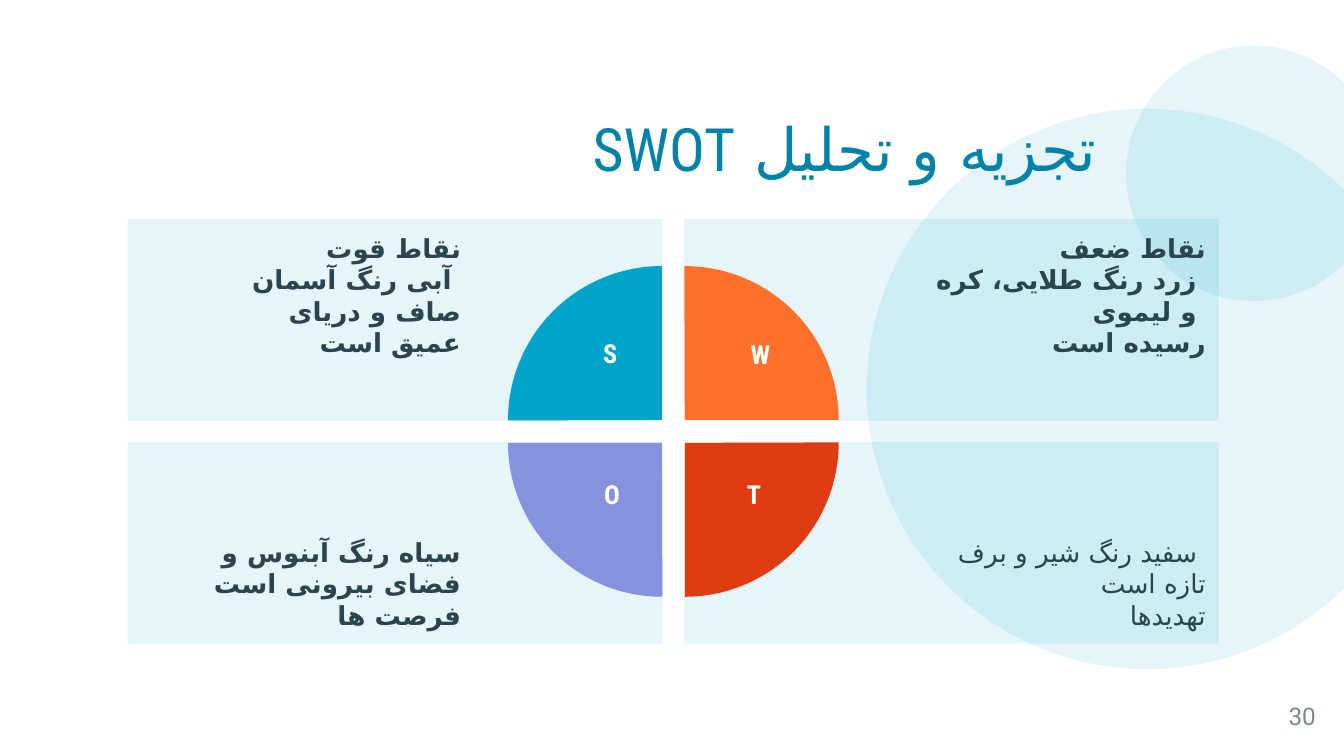
import lxml.etree
import pptx
import pptx.dml.color
import pptx.enum.shapes
import pptx.enum.text
import pptx.oxml.ns
import pptx.util

RGB = pptx.dml.color.RGBColor
SHAPE = pptx.enum.shapes.MSO_SHAPE
ANCHOR = pptx.enum.text.MSO_ANCHOR
qn = pptx.oxml.ns.qn

SKY = RGB(0x00, 0xA4, 0xCA)
ORANGE = RGB(0xFF, 0x71, 0x2A)
RED = RGB(0xDF, 0x3D, 0x11)
VIOLET = RGB(0x87, 0x92, 0xDF)
BLUE = RGB(0x00, 0x82, 0xA9)
SLATE = RGB(0x2C, 0x44, 0x4E)
GREY = RGB(0x7D, 0x8A, 0x8D)
WHITE = RGB(0xFF, 0xFF, 0xFF)
PERSIAN_FONT = "DejaVu Sans"  # Roboto has no Persian letters

TITLE = "تجزیه و تحلیل SWOT"
PAGE_NUMBER = "30"
CIRCLES = [(6.45, 0.81, 4.17), (8.38, 0.34, 1.9)]  # left, top, diameter

# Clockwise from top left: column, row, colour, bold, lines, letter, letter box
QUADRANTS = [
    (0, 0, SKY, True, ["نقاط قوت", "آبی رنگ آسمان ", "صاف و دریای", " عمیق است"],
     "S", (4.39, 2.46, 0.26, 0.43)),
    (1, 0, ORANGE, True, ["نقاط ضعف", "زرد رنگ طلایی، کره ", "و لیموی ", "رسیده است"],
     "W", (5.35, 2.47, 0.48, 0.41)),
    (1, 1, RED, False, ["سفید رنگ شیر و برف ", "تازه است", "تهدیدها"],
     "T", (5.46, 3.51, 0.27, 0.41)),
    (0, 1, VIOLET, True, ["سیاه رنگ آبنوس و", " فضای بیرونی است", "فرصت ها"],
     "O", (4.36, 3.51, 0.35, 0.43)),
]

GRID_LEFT, GRID_TOP = 0.95, 1.63
PANEL_W, PANEL_H, GAP = 3.98, 1.5, 0.16
PIE_LEFT, PIE_TOP, PIE_SIZE, PIE_GAP = 3.78, 1.98, 2.29, 0.17
MARGIN, PIE_MARGIN = 0.1, 1.5

prs = pptx.Presentation()
prs.slide_width = pptx.util.Inches(10)
prs.slide_height = prs.slide_width * 9 // 16
s = prs.slides.add_slide(prs.slide_layouts[6])


def inches(box):
    return [pptx.util.Inches(v) for v in box]


def add_shape(kind, box, color, alpha=None, adjustments=(), rotation=0):
    """Add a borderless preset shape; alpha is its opacity in percent."""
    sp = s.shapes.add_shape(kind, *inches(box))
    sp.shadow.inherit = False
    sp.line.fill.background()
    sp.fill.solid()
    sp.fill.fore_color.rgb = color
    if alpha is not None:
        clr = sp.fill._xPr.find(".//" + qn("a:srgbClr"))
        lxml.etree.SubElement(clr, qn("a:alpha"), val=str(alpha * 1000))
    for i, value in enumerate(adjustments):
        sp.adjustments[i] = value
    sp.rotation = rotation
    return sp


def write(sp, lines, margins, anchor, name, size, color, bold=False):
    """Fill a shape with right-aligned lines; margins are left, top, right, bottom."""
    tf = sp.text_frame
    tf.word_wrap = True
    tf.vertical_anchor = anchor
    for side, value in zip(("left", "top", "right", "bottom"), inches(margins)):
        setattr(tf, "margin_" + side, value)
    font = {"name": name, "size": pptx.util.Pt(size), "bold": bold}
    for i, line in enumerate(lines):
        p = tf.add_paragraph() if i else tf.paragraphs[0]
        p.alignment = pptx.enum.text.PP_ALIGN.RIGHT
        r = p.add_run()
        r.text = line
        for key, value in font.items():
            setattr(r.font, key, value)
        r.font.color.rgb = color
        lxml.etree.SubElement(r._r.get_or_add_rPr(), qn("a:cs"), typeface=PERSIAN_FONT)
    return tf


for left, top, size in CIRCLES:
    add_shape(SHAPE.CHORD, (left, top, size, size), SKY, 10, (27, 189))

title = s.shapes.add_textbox(*inches((0.94, 0.72, 7.22, 0.82)))
tf = write(title, [TITLE], [0] * 4, ANCHOR.MIDDLE, "Roboto Condensed", 32, BLUE)
tf.paragraphs[0].line_spacing = 0.9
tf.paragraphs[0]._p.get_or_add_pPr().set("rtl", "1")

number = s.shapes.add_textbox(*inches((9.41, 5.17, 0.38, 0.31)))
write(number, [PAGE_NUMBER], [0] * 4, ANCHOR.MIDDLE, "Roboto", 13, GREY)

for col, row, color, bold, lines, letter, box in QUADRANTS:
    panel = add_shape(SHAPE.RECTANGLE,
                      (GRID_LEFT + col * (PANEL_W + GAP), GRID_TOP + row * (PANEL_H + GAP),
                       PANEL_W, PANEL_H), SKY, 10)
    margins = [MARGIN] * 4
    margins[0 if col else 2] = PIE_MARGIN
    write(panel, lines, margins, ANCHOR.BOTTOM if row else ANCHOR.TOP,
          "Roboto", 14, SLATE, bold)

for turn, (col, row, color, *_) in enumerate(QUADRANTS):
    add_shape(SHAPE.PIE,
              (PIE_LEFT + col * PIE_GAP, PIE_TOP + row * PIE_GAP, PIE_SIZE, PIE_SIZE),
              color, adjustments=(107.89, 162), rotation=90 * turn)

for *_, letter, box in QUADRANTS:
    label = s.shapes.add_textbox(*inches(box))
    write(label, [letter], (0.1, 0.05, 0.1, 0.05), ANCHOR.TOP,
          "Roboto Condensed", 14, WHITE, True)

prs.save("out.pptx")
